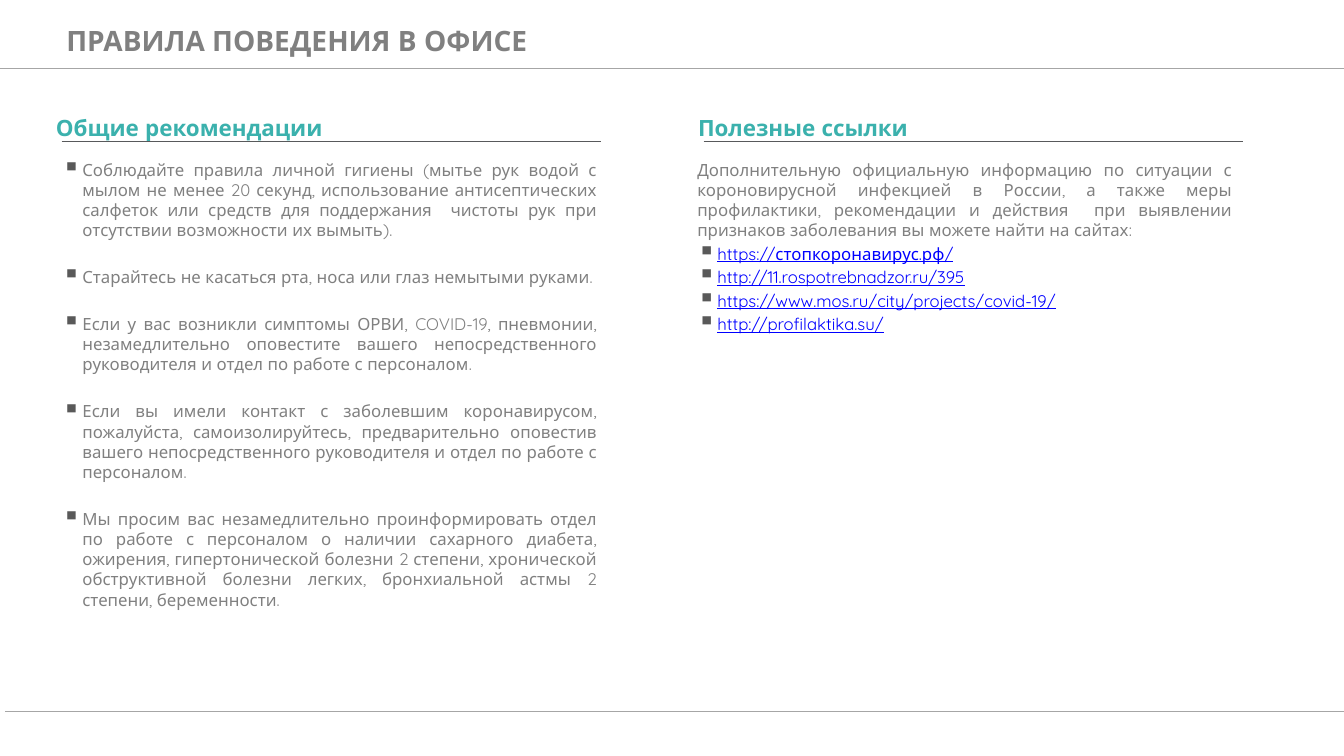
from collections import namedtuple

from lxml.etree import SubElement
from pptx import Presentation
from pptx.dml.color import RGBColor
from pptx.enum.shapes import MSO_CONNECTOR as Connector
from pptx.enum.text import MSO_ANCHOR as Anchor, PP_ALIGN as Align
from pptx.oxml.ns import qn
from pptx.util import Pt

Box = namedtuple("Box", "left top width height")

COLORS = {
    "text": "808080",
    "accent": "3BB1AD",
    "bullet": "595959",
    "link": "0000FF",
    "frame": "A6A6A6",
    "rule": "58595B",
}
TITLE_FONT, BODY_FONT = "League Spartan", "Quicksand"
PAGE = Box(0, 0, 960, 540)
LINK_GAP, ITEM_GAP = 2.4, 19.2

RECOMMENDATIONS = [
    "Соблюдайте правила личной гигиены (мытье рук водой с мылом не менее 20 секунд, "
    "использование антисептических салфеток или средств для поддержания  чистоты рук "
    "при отсутствии возможности их вымыть).",
    "Старайтесь не касаться рта, носа или глаз немытыми руками.",
    "Если у вас возникли симптомы ОРВИ, COVID-19, пневмонии, незамедлительно оповестите "
    "вашего непосредственного руководителя и отдел по работе с персоналом.",
    "Если вы имели контакт с заболевшим коронавирусом, пожалуйста, самоизолируйтесь, "
    "предварительно оповестив вашего непосредственного руководителя и отдел по работе "
    "с персоналом.",
    "Мы просим вас незамедлительно проинформировать отдел по работе с персоналом о наличии "
    "сахарного диабета, ожирения, гипертонической болезни 2 степени, хронической "
    "обструктивной болезни легких, бронхиальной астмы 2 степени, беременности.",
]
LINKS_INTRO = (
    "Дополнительную официальную информацию по ситуации с короновирусной инфекцией в России, "
    "а также меры профилактики, рекомендации и действия  при выявлении признаков "
    "заболевания вы можете найти на сайтах:"
)
LINKS = [
    "https://стопкоронавирус.рф/",
    "http://11.rospotrebnadzor.ru/395",
    "https://www.mos.ru/city/projects/covid-19/",
    "http://profilaktika.su/",
]


def add_rule(page, left, top, width, color, weight):
    """Draw a horizontal line."""
    line = page.shapes.add_connector(
        Connector.STRAIGHT, Pt(left), Pt(top), Pt(left + width), Pt(top))
    line.line.color.rgb = RGBColor.from_string(COLORS[color])
    line.line.width = Pt(weight)
    SubElement(line._element.spPr, qn("a:effectLst"))


def add_text_frame(page, box, inset=(7.2, 3.6)):
    """Add a wrapping text box and return its frame."""
    frame = page.shapes.add_textbox(*(Pt(length) for length in box)).text_frame
    frame.word_wrap = True
    frame.margin_left = frame.margin_right = Pt(inset[0])
    frame.margin_top = frame.margin_bottom = Pt(inset[1])
    return frame


def add_span(para, text, size, color, font=BODY_FONT, bold=False, underline=False):
    """Add one formatted run to a paragraph."""
    span = para.add_run()
    span.text = text
    span.font.name = font
    span.font.size = Pt(size)
    span.font.bold = bold
    span.font.underline = underline
    span.font.color.rgb = RGBColor.from_string(COLORS[color])


def set_bullet(para):
    """Give a paragraph a square bullet with a hanging indent."""
    props = para._p.get_or_add_pPr()
    props.set("marL", str(Pt(14.4)))
    props.set("indent", str(-Pt(14.4)))
    SubElement(SubElement(props, qn("a:buClr")), qn("a:srgbClr"), val=COLORS["bullet"])
    SubElement(props, qn("a:buSzPct"), val="150000")
    SubElement(props, qn("a:buChar"), char="▪")


def add_body(frame, items, gap):
    """Fill a frame with justified paragraphs given as text, bullet flag and link flag."""
    for index, (text, bulleted, linked) in enumerate(items):
        para = frame.add_paragraph() if index else frame.paragraphs[0]
        para.alignment = Align.JUSTIFY
        if bulleted:
            set_bullet(para)
        if index:
            para.space_before = Pt(gap)
        add_span(para, text, 12, "link" if linked else "text", underline=linked)


def add_header(page, box):
    """Place the page title and the line below it."""
    frame = add_text_frame(page, Box(box.left + 40.3, box.top + 9.4, 702.7, 38.9))
    frame.vertical_anchor = Anchor.MIDDLE
    add_span(frame.paragraphs[0], "ПРАВИЛА ПОВЕДЕНИЯ В ОФИСЕ", 20, "text", TITLE_FONT, True)
    add_rule(page, box.left, box.top + box.height, box.width, "frame", 0.75)


def add_column(page, box, heading, items, gap, outdent):
    """Place a heading, its rule and the body text of one column."""
    frame = add_text_frame(page, Box(box.left, box.top, box.width, 19.4), (0, 0))
    add_span(frame.paragraphs[0], heading, 16, "accent", bold=True)
    add_rule(page, box.left + 4, box.top + 19.4, box.width, "rule", 0.25)
    body = Box(box.left - outdent, box.top + 28.8, 396.4, box.height - 28.8)
    add_body(add_text_frame(page, body), items, gap)


def build_deck():
    """Build the slide and save it."""
    deck = Presentation()
    deck.slide_width, deck.slide_height = Pt(PAGE.width), Pt(PAGE.height)
    page = deck.slides.add_slide(deck.slide_layouts[6])
    add_header(page, Box(0, 0, PAGE.width, 49))
    add_column(page, Box(40, 81.4, 385, 420), "Общие рекомендации",
               [(text, True, False) for text in RECOMMENDATIONS], ITEM_GAP, 2.6)
    add_column(page, Box(498.6, 81.4, 385, 217), "Полезные ссылки",
               [(LINKS_INTRO, False, False)] + [(link, True, True) for link in LINKS],
               LINK_GAP, 7.6)
    add_rule(page, 3.6, 508.3, PAGE.width - 3.6, "frame", 0.75)
    deck.save("out.pptx")


if __name__ == "__main__":
    build_deck()
